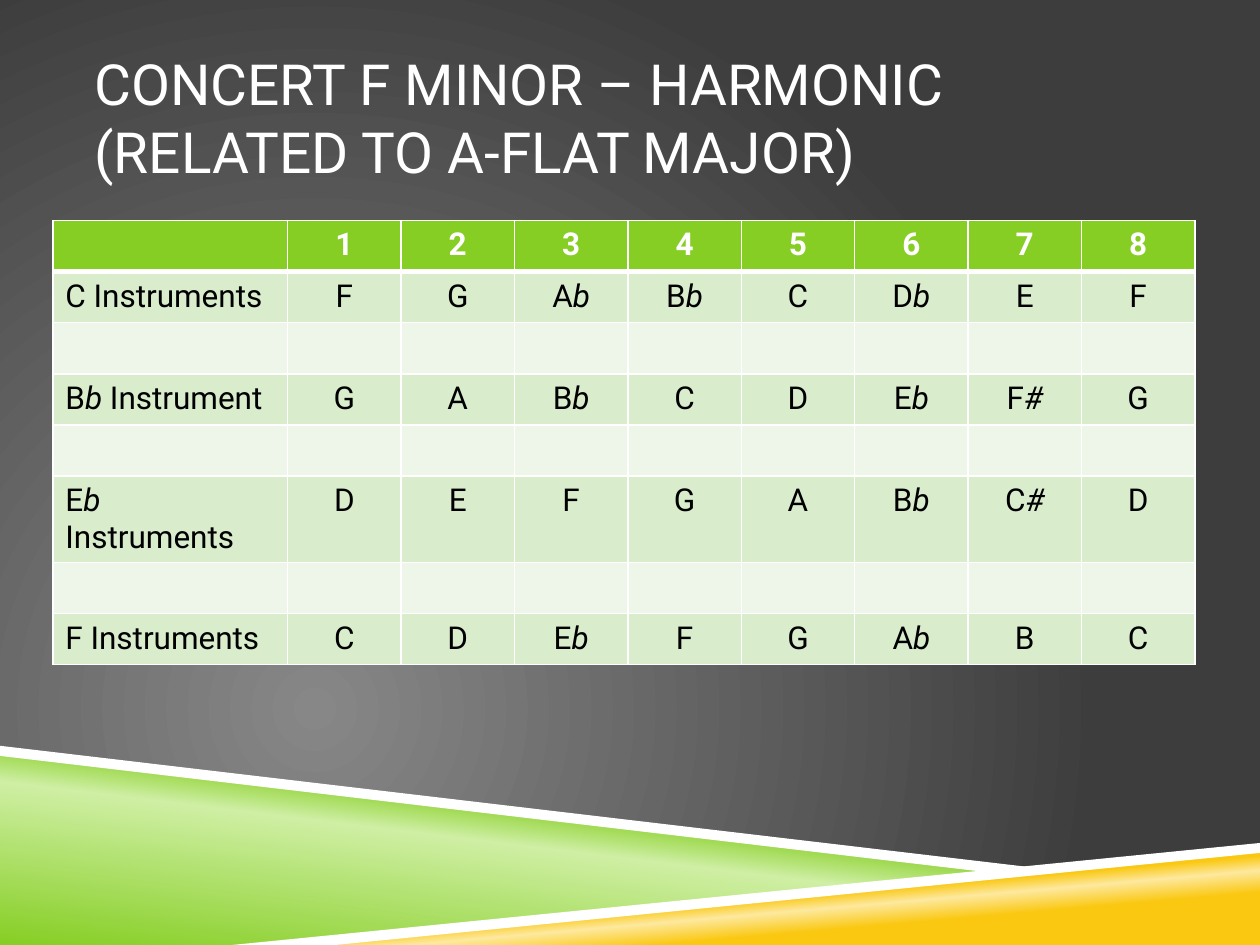
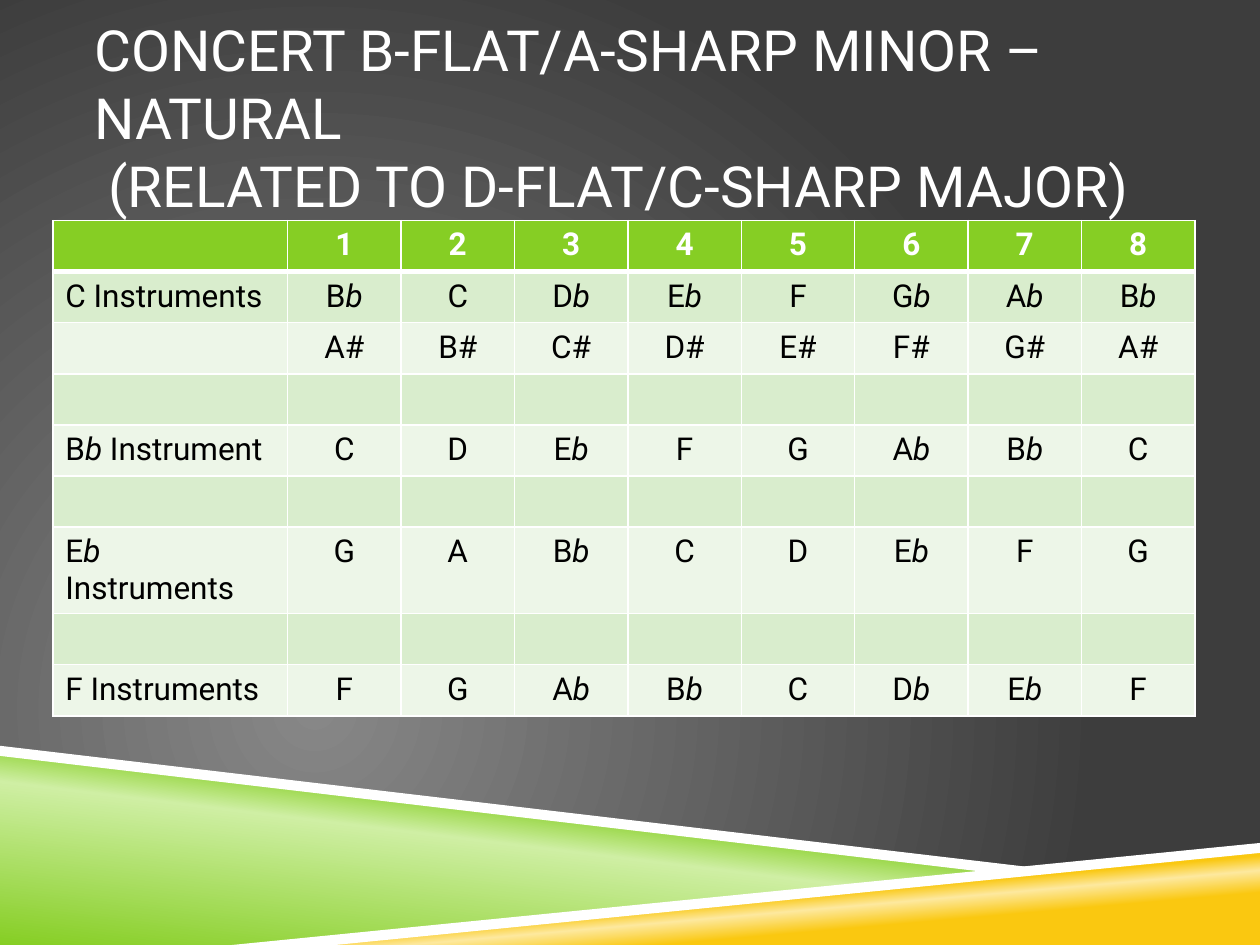
from lxml.etree import SubElement
from pptx import Presentation
from pptx.dml.color import RGBColor
from pptx.enum.text import MSO_ANCHOR as Anchor, MSO_AUTO_SIZE as AutoSize, PP_ALIGN as Align
from pptx.oxml.ns import qn
from pptx.util import Pt

# Colours
WHITE = RGBColor(0xFF, 0xFF, 0xFF)
BLACK = RGBColor(0x00, 0x00, 0x00)
GREEN = RGBColor(0x86, 0xCE, 0x24)
PALE_GREEN = RGBColor(0xCF, 0xEF, 0xA4)
YELLOW = RGBColor(0xFA, 0xC8, 0x10)
PALE_YELLOW = RGBColor(0xFD, 0xE9, 0x9F)
GREY = RGBColor(0x87, 0x87, 0x87)
DARK_GREY = RGBColor(0x3D, 0x3D, 0x3D)
ROW_TINTS = [RGBColor(0xED, 0xF6, 0xE8), RGBColor(0xD9, 0xED, 0xCD)]

# Bands at the foot of each slide: corners, then a plain colour or gradient stops and angle
BANDS = [
    ([(0, 429.8), (570.2, 498.2), (144, 540), (0, 540)],
     ([(0, GREEN), (52, PALE_GREEN), (66, GREEN)], 277)),
    ([(142.6, 540), (720, 483.8), (720, 540)],
     ([(28, YELLOW), (40, PALE_YELLOW), (48, YELLOW)], 265)),
    ([(0, 426.2), (0, 432), (568.8, 499), (599, 496.8)], WHITE),
    ([(720, 481.7), (132.5, 540), (191.5, 540), (720, 487.4)], WHITE),
]

# Table content: underscores switch italics on and off
HEADER = ("", "1 2 3 4 5 6 7 8")
GAP = ("", "")
C_LABEL, B_FLAT_LABEL = "C Instruments", "B_b _Instrument"
E_FLAT_LABEL, F_LABEL = "E_b_ Instruments", "F Instruments"

SCALES = [
    (["CONCERT F MINOR – HARMONIC", "(RELATED TO A-FLAT MAJOR)"],
     [HEADER,
      (C_LABEL, "F G A_b B_b C D_b E F"),
      GAP,
      (B_FLAT_LABEL, "G A B_b C D E_b F_# G"),
      GAP,
      (E_FLAT_LABEL, "D E F G A B_b C_# D"),
      GAP,
      (F_LABEL, "C D E_b F G A_b B C")]),
    (["CONCERT B-FLAT/A-SHARP MINOR – NATURAL", " (RELATED TO D-FLAT/C-SHARP MAJOR)"],
     [HEADER,
      (C_LABEL, "B_b C D_b E_b F G_b A_b B_b"),
      ("", "A# B# C# D# E# F# G# A#"),
      GAP,
      (B_FLAT_LABEL, "C D E_b F G A_b B_b C"),
      GAP,
      (E_FLAT_LABEL, "G A B_b C D E_b F G"),
      GAP,
      (F_LABEL, "F G A_b B_b C D_b E_b F")]),
]


def fill_gradient(fill, element, stops, angle=None):
    """Linear gradient, or a circular one when no angle is given."""
    fill.gradient()
    gradient = next(element.iter(qn("a:gradFill")))
    gradient.clear()
    gradient.set("rotWithShape", "1")
    stop_list = SubElement(gradient, qn("a:gsLst"))
    for position, color in stops:
        stop = SubElement(stop_list, qn("a:gs"), pos=str(position * 1000))
        SubElement(stop, qn("a:srgbClr"), val=str(color))
    if angle is None:
        circle = SubElement(gradient, qn("a:path"), path="circle")
        SubElement(circle, qn("a:fillToRect"), l="50000", t="100000", r="100000", b="50000")
    else:
        SubElement(gradient, qn("a:lin"), ang=str(angle * 60000), scaled="0")


class ScaleDeck:
    font_name = "Roboto"
    title_size = Pt(32.4)
    table_size = Pt(18)
    label_width, note_width, row_height = Pt(134.2), Pt(64.8), Pt(29.2)

    def __init__(self):
        self.presentation = Presentation()
        self.presentation.slide_width, self.presentation.slide_height = Pt(720), Pt(540)
        master = self.presentation.slide_master
        fill_gradient(master.background.fill, master.element, [(0, GREY), (100, DARK_GREY)])
        self.slide = None

    def new_slide(self):
        self.slide = self.presentation.slides.add_slide(self.presentation.slide_layouts[5])
        for corners, paint in BANDS:
            self.band(corners, paint)

    def band(self, corners, paint):
        points = [(Pt(x), Pt(y)) for x, y in corners]
        builder = self.slide.shapes.build_freeform(*points[0])
        builder.add_line_segments(points[1:], close=True)
        shape = builder.convert_to_shape()
        shape.shadow.inherit = False
        shape.line.fill.background()
        if isinstance(paint, RGBColor):
            shape.fill.solid()
            shape.fill.fore_color.rgb = paint
        else:
            fill_gradient(shape.fill, shape.element, *paint)

    def run(self, paragraph, text, size, color, bold=False, italic=False):
        run = paragraph.add_run()
        run.text = text
        font = run.font
        font.name, font.size, font.bold, font.italic = self.font_name, size, bold, italic
        font.color.rgb = color

    def title(self, lines):
        shape = self.slide.shapes.title
        shape.left, shape.top, shape.width, shape.height = Pt(54), Pt(21.6), Pt(612), Pt(90)
        frame = shape.text_frame
        frame.auto_size, frame.word_wrap = AutoSize.NONE, True
        frame.vertical_anchor = Anchor.MIDDLE
        frame.margin_left = frame.margin_right = 0
        frame.margin_top = frame.margin_bottom = Pt(3.6)
        paragraph = frame.paragraphs[0]
        paragraph.alignment = Align.LEFT
        for number, line in enumerate(lines):
            if number:
                paragraph.add_line_break()
            self.run(paragraph, line, self.title_size, WHITE)

    def borders(self, cell, top, bottom):
        properties = cell._tc.get_or_add_tcPr()
        sides = [("a:lnL", 1), ("a:lnR", 1), ("a:lnT", top), ("a:lnB", bottom)]
        for index, (side, width) in enumerate(sides):
            line = SubElement(properties, qn(side), w=str(Pt(width)))
            fill = SubElement(line, qn("a:solidFill"))
            SubElement(fill, qn("a:srgbClr"), val=str(WHITE))
            properties.insert(index, line)

    def cell(self, cell, text, row, centred):
        header = row == 0
        cell.fill.solid()
        cell.fill.fore_color.rgb = GREEN if header else ROW_TINTS[row % 2]
        self.borders(cell, top=3 if row == 1 else 1, bottom=3 if header else 1)
        paragraph = cell.text_frame.paragraphs[0]
        paragraph.alignment = Align.CENTER if centred else Align.LEFT
        for index, part in enumerate(text.split("_")):
            if part:
                self.run(paragraph, part, self.table_size, WHITE if header else BLACK,
                         bold=header, italic=index % 2 == 1)

    def table(self, rows):
        note_count = 8
        frame = self.slide.shapes.add_table(
            len(rows), note_count + 1, Pt(30.2), Pt(126),
            self.label_width + note_count * self.note_width, len(rows) * self.row_height)
        table = frame.table
        table.first_row = table.horz_banding = False
        for index, column in enumerate(table.columns):
            column.width = self.note_width if index else self.label_width
        for row, (label, notes) in enumerate(rows):
            table.rows[row].height = self.row_height
            texts = [label] + (notes.split() or [""] * note_count)
            for column, text in enumerate(texts):
                self.cell(table.cell(row, column), text, row, centred=column > 0)


def main():
    deck = ScaleDeck()
    for title_lines, rows in SCALES:
        deck.new_slide()
        deck.title(title_lines)
        deck.table(rows)
    deck.presentation.save("out.pptx")


if __name__ == "__main__":
    main()
